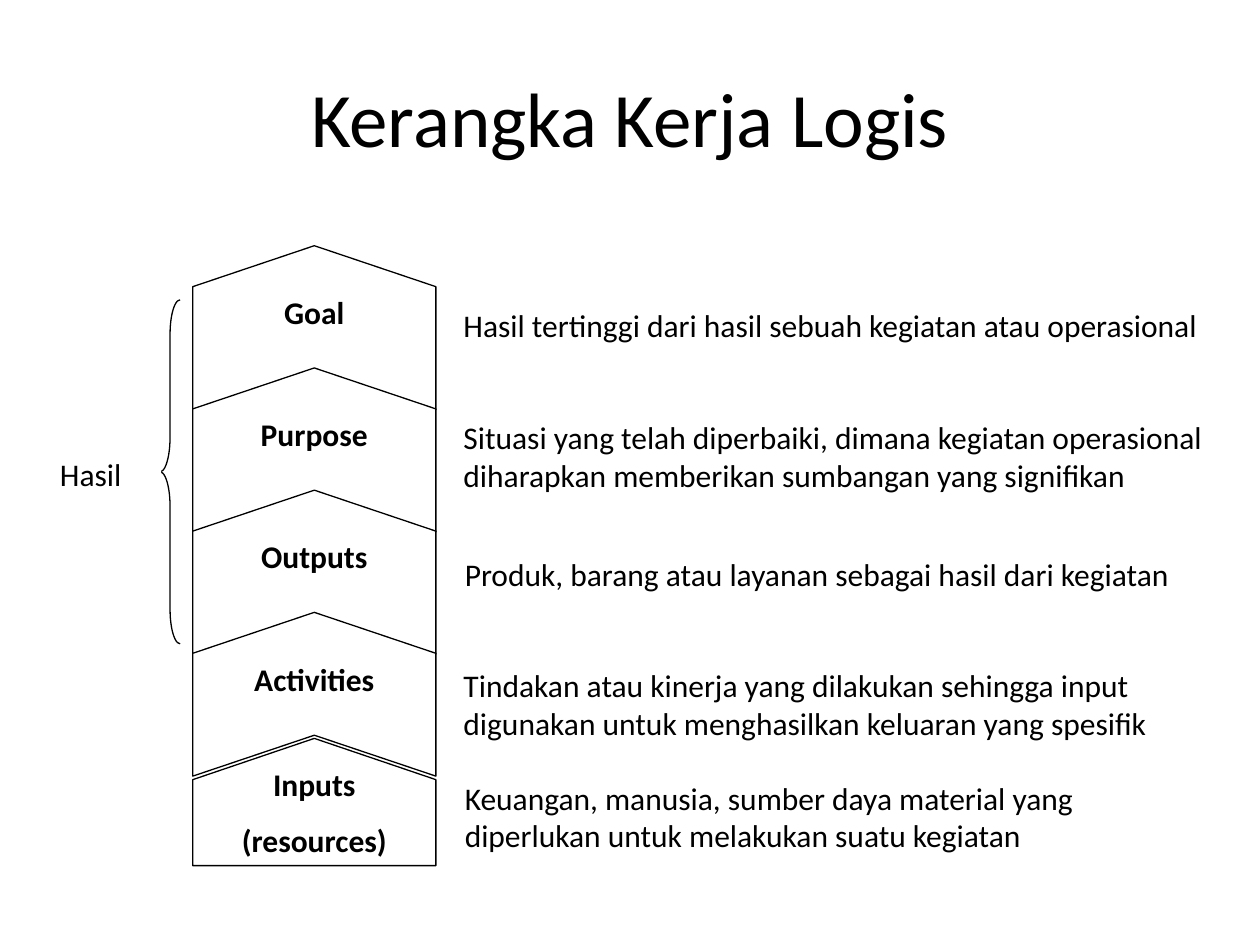
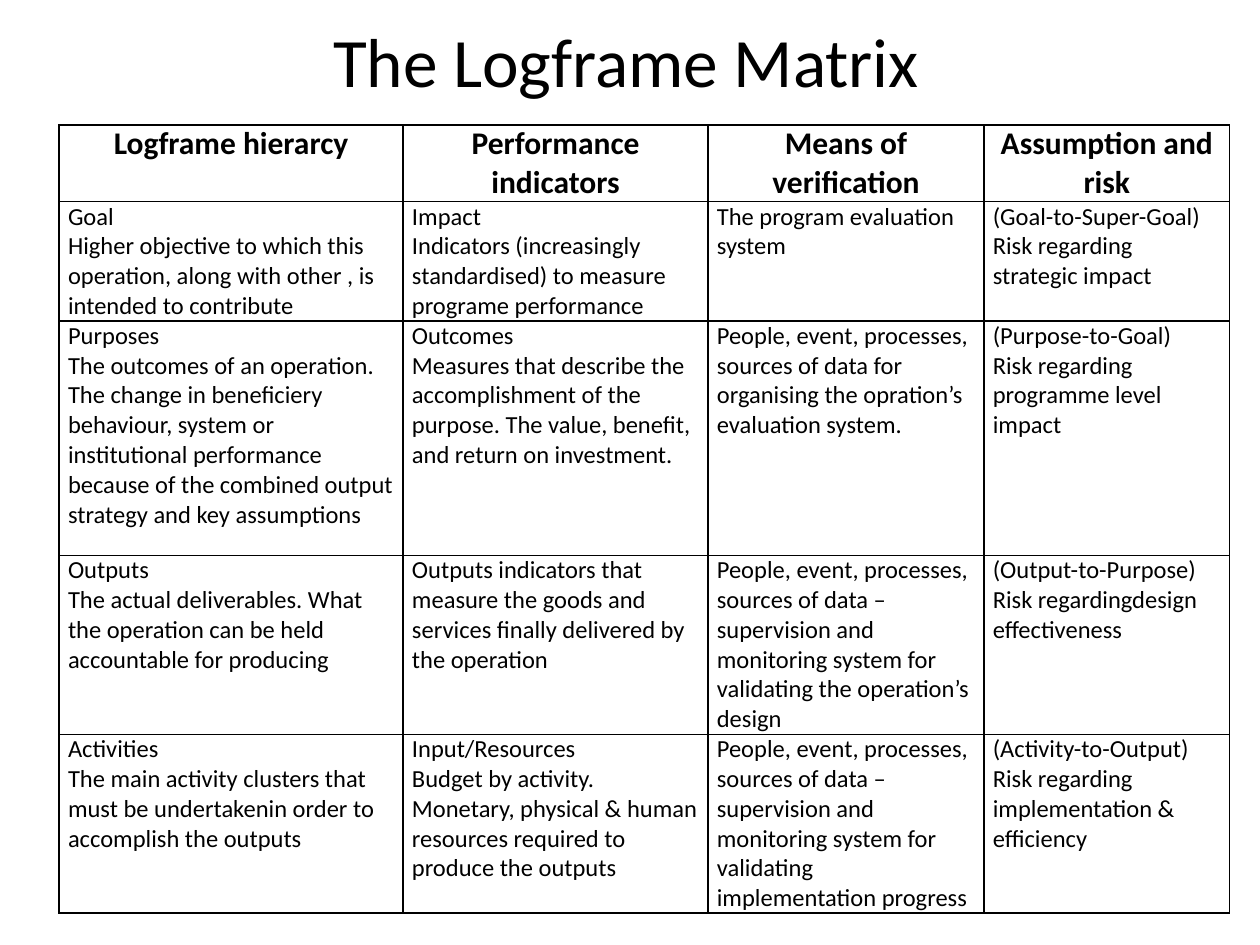
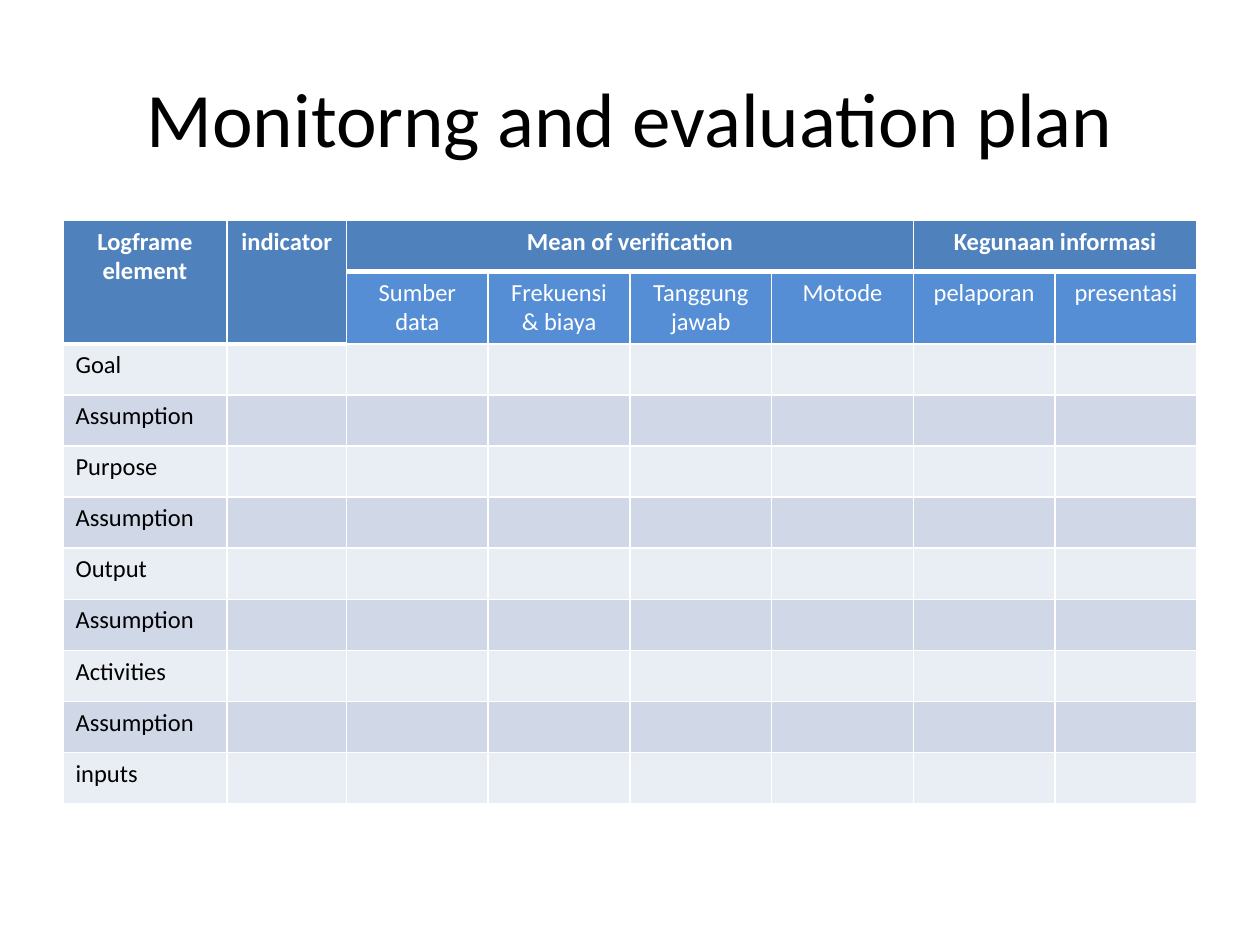
from lxml import etree
from pptx import Presentation
from pptx.dml.color import RGBColor
from pptx.enum import shapes, text
from pptx.oxml import ns
from pptx.util import Inches, Pt

FONT = "Calibri"
BLACK, WHITE = "000000", "FFFFFF"
HEADER, SUBHEADER = "4F81BD", "558ED5"
BANDS = ("E9EDF4", "D0D8E8")
LEFT, CENTER = text.PP_ALIGN.LEFT, text.PP_ALIGN.CENTER
SHAPE = shapes.MSO_SHAPE

LEVELS = [
    ("Goal", "Hasil tertinggi dari hasil sebuah kegiatan atau operasional"),
    ("Purpose", "Situasi yang telah diperbaiki, dimana kegiatan operasional "
                "diharapkan memberikan sumbangan yang signifikan"),
    ("Outputs", "Produk, barang atau layanan sebagai hasil dari kegiatan"),
    ("Activities", "Tindakan atau kinerja yang dilakukan sehingga input "
                   "digunakan untuk menghasilkan keluaran yang spesifik"),
    ("Inputs\n(resources)", "Keuangan, manusia, sumber daya material yang "
                            "diperlukan untuk melakukan suatu kegiatan"),
]
# Left, top and height of each description, relative to the diagram
DESCRIPTION_PLACES = [(3.42, 0.43, 0.75), (3.42, 1.32, 0.96), (3.43, 2.41, 0.74),
                      (3.42, 3.29, 0.75), (3.43, 4.18, 0.75)]

MATRIX = [
    ["Logframe hierarcy", "Performance indicators", "Means of verification",
     "Assumption and risk"],
    ["Goal\nHigher objective to which this operation, along with other , is "
     "intended to contribute",
     "Impact\nIndicators (increasingly standardised) to measure programe performance",
     "The program evaluation system",
     "(Goal-to-Super-Goal)\nRisk regarding strategic impact"],
    ["Purposes\nThe outcomes of an operation. The change in beneficiery behaviour, "
     "system or institutional performance because of the combined output strategy "
     "and key assumptions",
     "Outcomes\nMeasures that describe the accomplishment of the purpose. "
     "The value, benefit, and return on investment.",
     "People, event, processes, sources of data for organising the opration’s "
     "evaluation system.",
     "(Purpose-to-Goal)\nRisk regarding programme level impact"],
    ["Outputs\nThe actual deliverables. What the operation can be held accountable "
     "for producing",
     "Outputs indicators that measure the goods and services finally delivered by "
     "the operation",
     "People, event, processes, sources of data – supervision and monitoring system "
     "for validating the operation’s design",
     "(Output-to-Purpose)\nRisk regardingdesign effectiveness"],
    ["Activities\nThe main activity clusters that must be undertakenin order to "
     "accomplish the outputs",
     "Input/Resources\nBudget by activity. Monetary, physical & human resources "
     "required to produce the outputs",
     "People, event, processes, sources of data – supervision and monitoring system "
     "for validating implementation progress",
     "(Activity-to-Output)\nRisk regarding implementation & efficiency"],
]

# Heading, row span and column span, keyed by first column
PLAN_HEADINGS = {0: ("Logframe element", 2, 1), 1: ("indicator", 2, 1),
                 2: ("Mean of verification", 1, 4), 6: ("Kegunaan informasi", 1, 2)}
PLAN_SUBHEADINGS = ["Sumber data", "Frekuensi & biaya", "Tanggung jawab", "Motode",
                    "pelaporan", "presentasi"]
PLAN_ELEMENTS = ["Goal", "Assumption", "Purpose", "Assumption", "Output",
                 "Assumption", "Activities", "Assumption", "inputs"]


# Shared helpers
def rgb(color):
    return RGBColor.from_string(color)


def write(frame, words, size, color=BLACK, bold=False, align=LEFT, after=0):
    for number, line in enumerate(words.split("\n")):
        paragraph = frame.add_paragraph() if number else frame.paragraphs[0]
        paragraph.alignment = align
        paragraph.space_after = Pt(after)
        run = paragraph.add_run()
        run.text = line
        run.font.name, run.font.size, run.font.bold = FONT, Pt(size), bold
        run.font.color.rgb = rgb(color)


def add_titled_slide(deck, words, box=(0.5, 0.3, 9, 1.25), size=44):
    slide = deck.slides.add_slide(deck.slide_layouts[5])
    title = slide.shapes.title
    title.left, title.top, title.width, title.height = map(Inches, box)
    frame = title.text_frame
    frame.auto_size = text.MSO_AUTO_SIZE.NONE
    frame.vertical_anchor = text.MSO_ANCHOR.MIDDLE
    write(frame, words, size, align=CENTER)
    return slide


def add_block(parent, kind, box, fill=None, outlined=False):
    block = parent.add_shape(kind, *map(Inches, box))
    block.shadow.inherit = False
    if fill:
        block.fill.solid()
        block.fill.fore_color.rgb = rgb(fill)
    else:
        block.fill.background()
    if outlined:
        block.line.color.rgb = rgb(BLACK)
        block.line.width = Pt(0.75)
    else:
        block.line.fill.background()
    block.text_frame.word_wrap = True
    block.text_frame.vertical_anchor = text.MSO_ANCHOR.TOP
    return block


def add_grid(slide, box, columns, rows):
    frame = slide.shapes.add_table(len(rows), len(columns), *map(Inches, box))
    grid = frame.table
    grid.first_row = grid.horz_banding = False
    for column, width in zip(grid.columns, columns):
        column.width = Inches(width)
    for row, height in zip(grid.rows, rows):
        row.height = Inches(height)
    return grid


def set_borders(cell, color, top=1, bottom=1):
    properties = cell._tc.get_or_add_tcPr()
    widths = {"a:lnL": 1, "a:lnR": 1, "a:lnT": top, "a:lnB": bottom}
    for place, (side, width) in enumerate(widths.items()):
        edge = etree.Element(ns.qn(side), w=str(Pt(width)))
        fill = etree.SubElement(edge, ns.qn("a:solidFill"))
        etree.SubElement(fill, ns.qn("a:srgbClr"), val=color)
        properties.insert(place, edge)


# Hierarchy of arrows with descriptions
def add_upward(parent, kind, box, point, words):
    x, y, w, h = box
    arrow = add_block(parent, kind, (x + (w - h) / 2, y + (h - w) / 2, h, w),
                      WHITE, outlined=True)
    arrow.rotation = 270
    arrow.adjustments[0] = point
    arrow.text_frame._txBody.bodyPr.set("vert", "vert")
    write(arrow.text_frame, words, 18, bold=True, align=CENTER, after=10)


def build_hierarchy(slide, x, y):
    parts = slide.shapes.add_group_shape().shapes
    arrow_left, arrow_width, pitch = x + 1.37, 1.93, 0.97
    for level, (name, _) in enumerate(LEVELS[:-1]):
        add_upward(parts, SHAPE.CHEVRON,
                   (arrow_left, y + level * pitch, arrow_width, 1.3), 0.25, name)
    add_upward(parts, SHAPE.PENTAGON,
               (arrow_left, y + 3.91, arrow_width, 1.01), 0.324, LEVELS[-1][0])

    for (_, description), (dx, dy, height) in zip(LEVELS, DESCRIPTION_PLACES):
        note = add_block(parts, SHAPE.RECTANGLE, (x + dx, y + dy, 6.09, height), WHITE)
        write(note.text_frame, description, 18, after=10)

    # Results bracket
    brace = add_block(parts, SHAPE.LEFT_BRACE, (x + 1.11, y + 0.43, 0.16, 2.73),
                      outlined=True)
    brace.adjustments[0] = 1.717
    results = add_block(parts, SHAPE.RECTANGLE, (x, y + 1.61, 1.12, 0.42), WHITE)
    write(results.text_frame, "Hasil", 18, align=CENTER, after=10)


# Logframe matrix
def build_matrix(slide, box):
    grid = add_grid(slide, box, [2.73, 2.42, 2.19, 1.95],
                    [0.45, 0.93, 1.86, 1.12, 1.3])
    for r, row in enumerate(MATRIX):
        for c, words in enumerate(row):
            cell = grid.cell(r, c)
            cell.margin_left = cell.margin_right = Inches(0.07)
            cell.margin_top = cell.margin_bottom = 0
            cell.fill.background()
            set_borders(cell, BLACK)
            if r == 0:
                write(cell.text_frame, words, 18, bold=True, align=CENTER)
            else:
                write(cell.text_frame, words, 14)


# Monitoring plan
def build_plan(slide, box):
    width, height = box[2:]
    row_count = len(PLAN_ELEMENTS) + 2
    side_columns = [1.3, 0.95]
    equal = (width - sum(side_columns)) / len(PLAN_SUBHEADINGS)
    columns = side_columns + [equal] * len(PLAN_SUBHEADINGS)
    grid = add_grid(slide, box, columns, [height / row_count] * row_count)

    for r in range(row_count):
        for c in range(len(columns)):
            cell = grid.cell(r, c)
            in_heading = r == 0 or (r == 1 and c < 2)
            below_heading = r == (2 if c < 2 else 1)
            color = HEADER if in_heading else SUBHEADER if r == 1 else BANDS[r % 2]
            cell.fill.solid()
            cell.fill.fore_color.rgb = rgb(color)
            set_borders(cell, WHITE, top=3 if below_heading else 1,
                        bottom=3 if in_heading else 1)

    for c, (words, down, across) in PLAN_HEADINGS.items():
        heading = grid.cell(0, c)
        heading.merge(grid.cell(down - 1, c + across - 1))
        write(heading.text_frame, words, 14, WHITE, bold=True, align=CENTER)
    for c, words in enumerate(PLAN_SUBHEADINGS, start=2):
        write(grid.cell(1, c).text_frame, words, 14, WHITE, align=CENTER)
    for r, words in enumerate(PLAN_ELEMENTS, start=2):
        write(grid.cell(r, 0).text_frame, words, 14)


def main():
    deck = Presentation()
    deck.slide_width, deck.slide_height = Inches(10), Inches(7.5)

    build_hierarchy(add_titled_slide(deck, "Kerangka Kerja Logis"), 0.16, 1.95)
    build_matrix(add_titled_slide(deck, "The Logframe Matrix",
                                  (0.47, 0.17, 9, 0.61), 39.6),
                 (0.47, 0.99, 9.3, 6.2))
    build_plan(add_titled_slide(deck, "Monitorng and evaluation plan"),
               (0.5, 1.75, 9, 4.46))
    deck.save("out.pptx")


if __name__ == "__main__":
    main()
